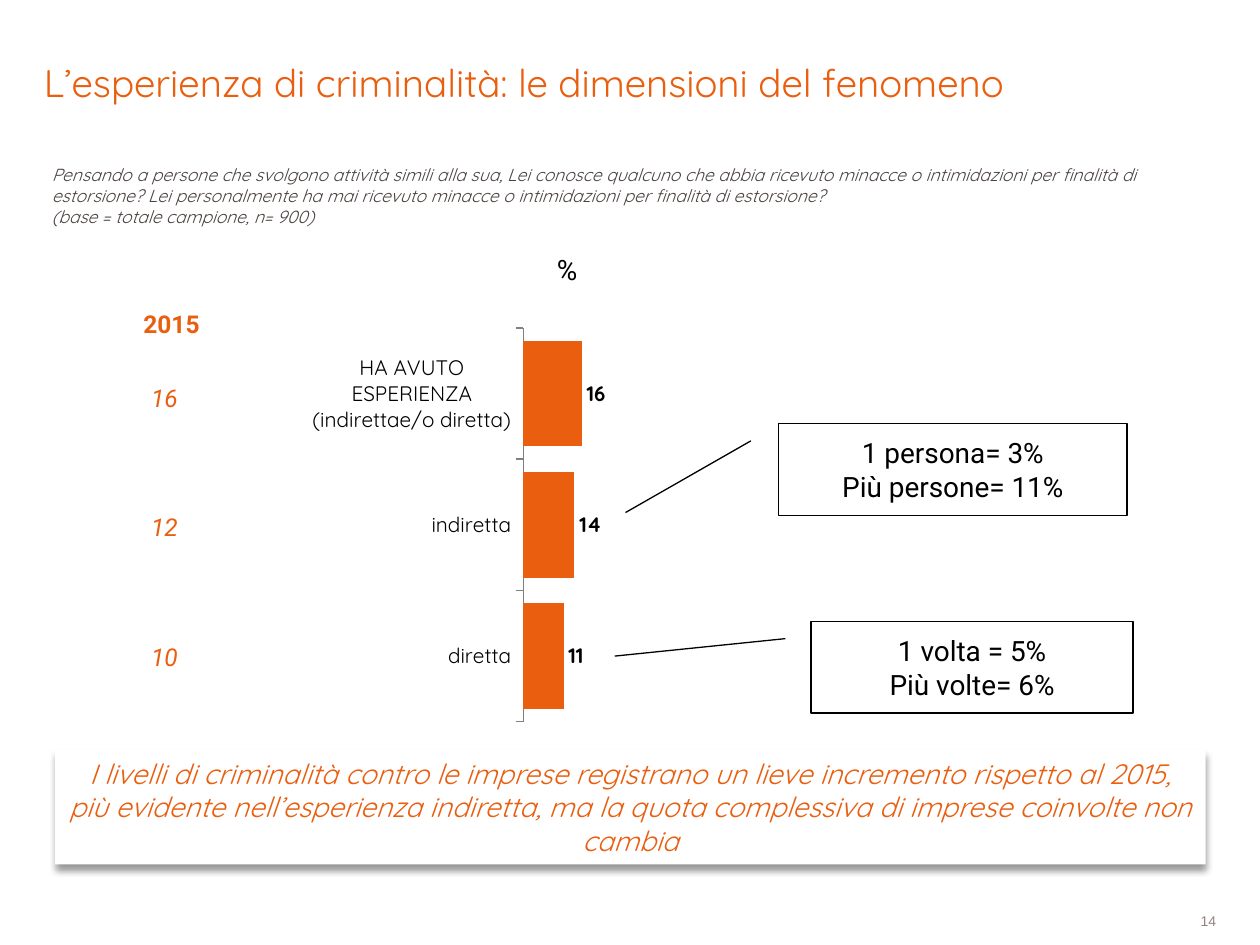
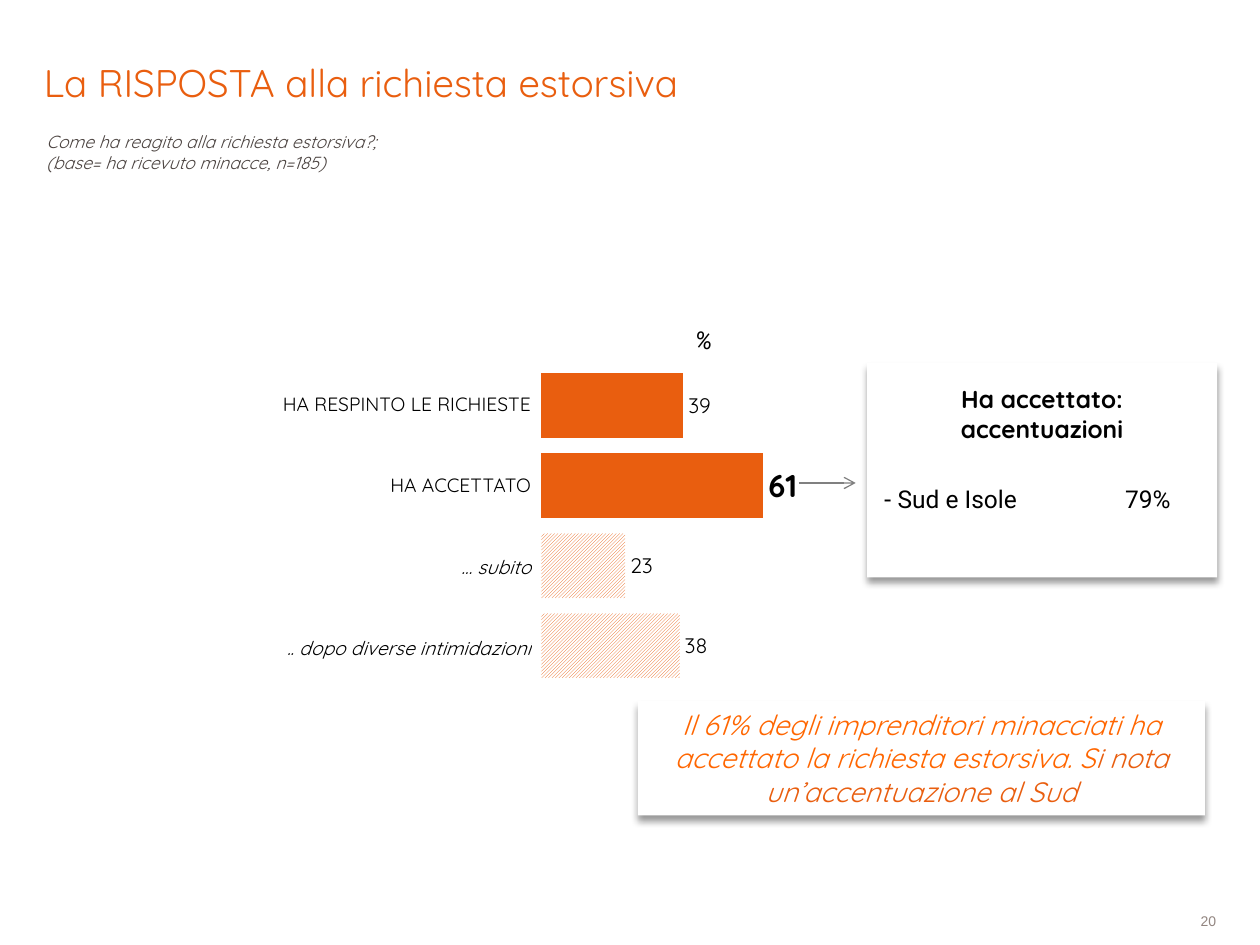
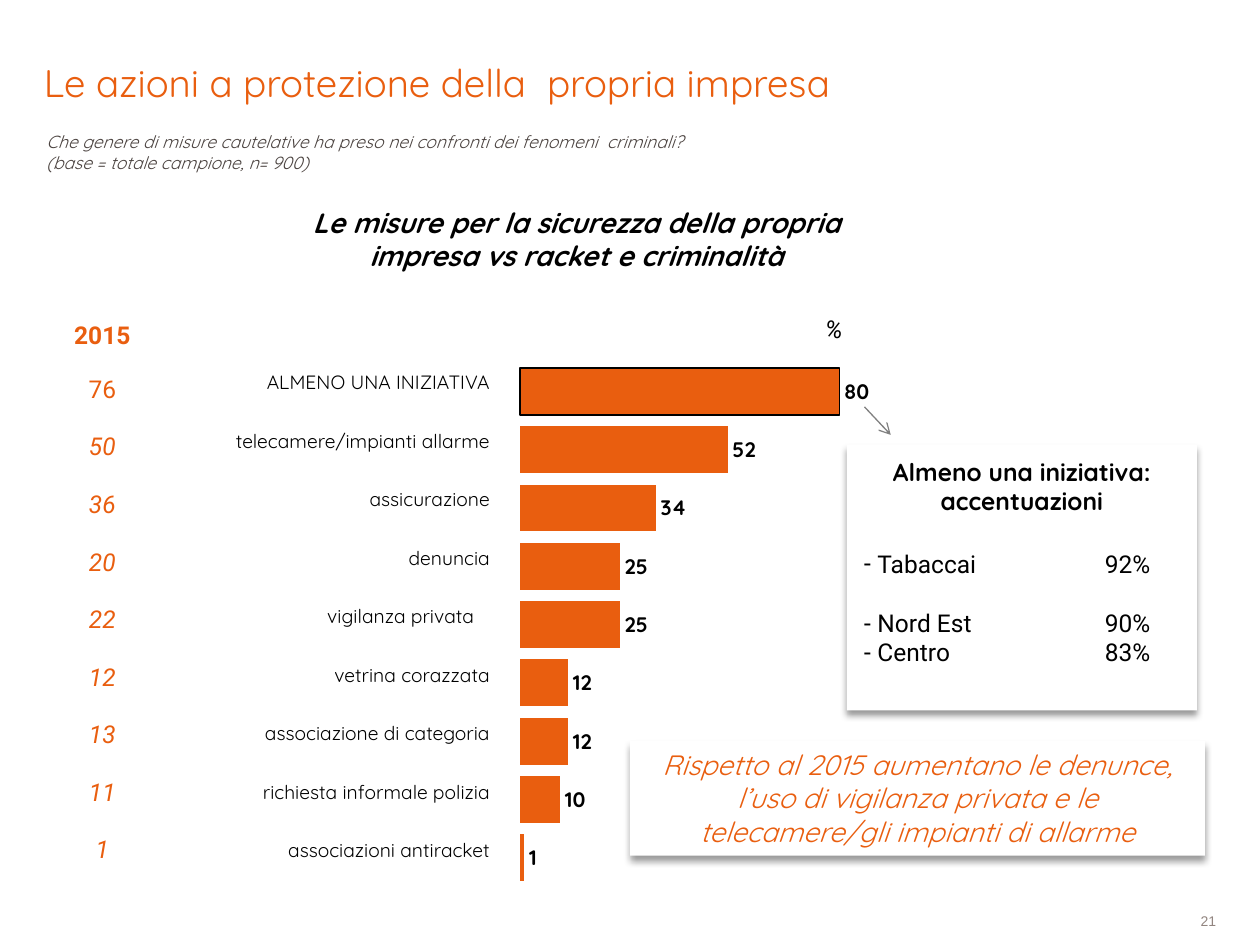
import pptx
import pptx.chart.data
import pptx.dml.color
import pptx.enum.chart
import pptx.enum.dml
import pptx.enum.shapes
import pptx.enum.text
import pptx.oxml
import pptx.oxml.ns
import pptx.util
from lxml import etree

Pt = pptx.util.Pt
qn = pptx.oxml.ns.qn
ALIGN = pptx.enum.text.PP_ALIGN
ANCHOR = pptx.enum.text.MSO_ANCHOR
SHAPE = pptx.enum.shapes.MSO_SHAPE

COLORS = {
    "orange": "E95E0F", "bright": "FF6600", "black": "000000", "white": "FFFFFF",
    "question": "4A423F", "number": "928580", "grey": "808080",
}

# Text formats
TITLE = {"name": "Quicksand", "size": 22, "color": "orange"}
QUESTION = {"name": "Quicksand", "size": 10, "color": "question", "italic": True}
NUMBER = {"name": "Arial", "size": 8, "color": "number"}
CONCLUSION = {"name": "Quicksand", "size": 16, "color": "orange", "italic": True}
HEADING = {"name": "Quicksand", "size": 14, "color": "black", "bold": True}
SUBTITLE = {**HEADING, "size": 16, "italic": True}
PLAIN = {"name": "Roboto", "size": 14, "color": "black"}
PERCENT = {**PLAIN, "italic": True}
CALLOUT = {**PLAIN, "size": 16}
YEAR = {"name": "Roboto", "size": 14, "color": "orange", "bold": True}
PAST = {"name": "Roboto", "size": 14, "color": "orange", "italic": True}
ROW = {"name": "Quicksand", "size": 11, "color": "black"}
CHART = {"name": "Roboto", "size": 18, "color": "black"}
LABEL = {"name": "Quicksand", "size": 12, "color": "black"}


def rgb(name):
    return pptx.dml.color.RGBColor.from_string(COLORS[name])


def style(font, fmt):
    for key, value in fmt.items():
        if key == "color":
            font.color.rgb = rgb(value)
        else:
            setattr(font, key, Pt(value) if key == "size" else value)


def place(sp, box):
    for key, value in zip(("left", "top", "width", "height"), box):
        setattr(sp, key, Pt(value))


def frame(tf, anchor=ANCHOR.TOP, inset=None):
    tf.auto_size = pptx.enum.text.MSO_AUTO_SIZE.NONE
    tf.word_wrap = True
    tf.vertical_anchor = anchor
    if inset is not None:
        for side in ("left", "top", "right", "bottom"):
            setattr(tf, "margin_" + side, Pt(inset))


def write(tf, paragraphs, fmt, align=ALIGN.LEFT):
    """Each paragraph is a string or a list of (text, format changes)."""
    for i, content in enumerate(paragraphs):
        p = tf.add_paragraph() if i else tf.paragraphs[0]
        p.alignment = align
        for text, changes in [(content, {})] if isinstance(content, str) else content:
            r = p.add_run()
            r.text = text
            style(r.font, {**fmt, **changes})


def text_box(s, box, paragraphs, fmt, align=ALIGN.LEFT, anchor=ANCHOR.TOP, inset=None):
    sp = s.shapes.add_textbox(*map(Pt, box))
    frame(sp.text_frame, anchor, inset)
    write(sp.text_frame, paragraphs, fmt, align)


def centred(s, x, y, text, fmt):
    """One short label around the point x, y."""
    text_box(s, (x - 30, y - 12, 60, 24), [text], fmt, ALIGN.CENTER, ANCHOR.MIDDLE, 0)


def new_slide(prs, layout, number, title, question, box):
    s = prs.slides.add_slide(prs.slide_layouts[layout])
    place(s.shapes.title, (25, 9.4, 601, 51))
    frame(s.shapes.title.text_frame, ANCHOR.BOTTOM, 0)
    write(s.shapes.title.text_frame, [title], TITLE)
    text_box(s, box, question, QUESTION)
    text_box(s, (598, 522, 97, 9), [str(number)], NUMBER, ALIGN.RIGHT, ANCHOR.MIDDLE, 0)
    return s


def white_shape(s, kind, box):
    sp = s.shapes.add_shape(kind, *map(Pt, box))
    sp.shadow.inherit = False
    sp.fill.solid()
    sp.fill.fore_color.rgb = rgb("white")
    sp.line.fill.background()
    return sp


def shadow_panel(s, box):
    sp = white_shape(s, SHAPE.RECTANGLE, box)
    effects = sp.element.spPr.find(qn("a:effectLst"))
    shadow = etree.SubElement(effects, qn("a:outerShdw"), blurRad=str(Pt(4)),
                              dist=str(Pt(3)), dir="5400000", algn="t", rotWithShape="0")
    color = etree.SubElement(shadow, qn("a:srgbClr"), val=COLORS["black"])
    etree.SubElement(color, qn("a:alpha"), val="40000")
    return sp


def conclusion(s, box, content):
    sp = shadow_panel(s, box)
    frame(sp.text_frame)
    write(sp.text_frame, [content], CONCLUSION, ALIGN.CENTER)


def callout(s, box, lines, adjustments):
    sp = white_shape(s, SHAPE.LINE_CALLOUT_1, box)
    sp.line.color.rgb = rgb("black")
    sp.line.width = Pt(0.75)
    for i, value in enumerate(adjustments):
        sp.adjustments[i] = value
    frame(sp.text_frame, ANCHOR.MIDDLE)
    write(sp.text_frame, lines, CALLOUT, ALIGN.CENTER)


def arrow(s, x1, y1, x2, y2):
    line = s.shapes.add_connector(pptx.enum.shapes.MSO_CONNECTOR.STRAIGHT,
                                  Pt(x1), Pt(y1), Pt(x2), Pt(y2))
    line.line.color.rgb = rgb("grey")
    line.line.width = Pt(0.75)
    etree.SubElement(line.line._get_or_add_ln(), qn("a:tailEnd"), type="arrow")
    etree.SubElement(line._element.spPr, qn("a:effectLst"))


def accents_card(s, box, heading, items, heading_y, list_y):
    """Card with a heading and a list of (name, share, space before)."""
    x, y, w, h = box
    shadow_panel(s, box)
    text_box(s, (x + 10, y + heading_y, w - 20, 45), [heading], HEADING,
             ALIGN.CENTER, ANCHOR.MIDDLE)
    body = s.placeholders[1]
    place(body, (x + 9.4, y + list_y, w - 19, h - list_y - 4))
    s.shapes.element.append(body.element)  # bring in front of the card
    frame(body.text_frame, inset=0)
    write(body.text_frame, [f"{name}\t{share}" for name, share, _ in items], PLAIN)
    for p, (_, _, gap) in zip(body.text_frame.paragraphs, items):
        pPr = p._p.get_or_add_pPr()
        pPr.set("marL", str(Pt(8)))
        pPr.set("indent", str(-Pt(8)))
        etree.SubElement(pPr, qn("a:buChar"), char="-")
        tabs = etree.SubElement(pPr, qn("a:tabLst"))
        etree.SubElement(tabs, qn("a:tab"), pos=str(Pt(138)), algn="l")
        p.space_before = Pt(gap)


def past_values(s, x, year_y, first_y, step, values, year_dx=0):
    """Column with the results of 2015."""
    centred(s, x + year_dx, year_y, "2015", YEAR)
    for i, (value, changes) in enumerate(values):
        centred(s, x, first_y + i * step, value, {**PAST, **changes})


def row_labels(s, box, rows):
    """Table of bar labels; each row is (text, format changes, right margin)."""
    table = s.shapes.add_table(len(rows), 1, *map(Pt, box)).table
    table.first_row = table.horz_banding = False
    for i, (text, changes, right) in enumerate(rows):
        table.rows[i].height = Pt(box[3] / len(rows))
        cell = table.cell(i, 0)
        cell.fill.background()
        cell.vertical_anchor = ANCHOR.MIDDLE
        for side, value in (("left", 1), ("top", 1), ("right", right), ("bottom", 0)):
            setattr(cell, "margin_" + side, Pt(value))
        write(cell.text_frame, [text], {**ROW, **changes}, ALIGN.RIGHT)


def bar_chart(s, box, cats, vals, plot_box, bold=True, show_cats=False):
    data = pptx.chart.data.CategoryChartData(number_format="0")
    data.categories = cats
    data.add_series("Series 1", vals)
    chart = s.shapes.add_chart(pptx.enum.chart.XL_CHART_TYPE.BAR_CLUSTERED,
                               *map(Pt, box), data).chart
    chart.has_legend = chart.has_title = False
    style(chart.font, CHART)

    # Axes
    axis = chart.value_axis
    for key, value in {"minimum_scale": 0, "maximum_scale": 100, "major_unit": 10,
                       "has_major_gridlines": False, "visible": False}.items():
        setattr(axis, key, value)
    axis = chart.category_axis
    axis.reverse_order = True
    axis.visible = show_cats
    if show_cats:
        axis.format.line.color.rgb = rgb("grey")
        style(axis.tick_labels.font, LABEL)

    # Bars and their labels
    plot = chart.plots[0]
    plot.gap_width = 24
    plot.vary_by_categories = False
    series = plot.series[0]
    series.invert_if_negative = False
    series.format.fill.solid()
    series.format.fill.fore_color.rgb = rgb("orange")
    labels = series.data_labels
    for key, value in {"show_value": True, "number_format": "0",
                       "number_format_is_linked": False,
                       "position": pptx.enum.chart.XL_LABEL_POSITION.OUTSIDE_END}.items():
        setattr(labels, key, value)
    style(labels.font, {**LABEL, "bold": bold})

    # Inner plot area as fractions of the chart
    area = next(chart.element.iter(qn("c:plotArea")))
    for old in area.findall(qn("c:layout")):
        area.remove(old)
    layout = etree.Element(qn("c:layout"))
    area.insert(0, layout)
    manual = etree.SubElement(layout, qn("c:manualLayout"))
    settings = [("layoutTarget", "inner"), ("xMode", "edge"), ("yMode", "edge"),
                *zip("xywh", plot_box)]
    for tag, value in settings:
        etree.SubElement(manual, qn("c:" + tag), val=str(value))
    return series


def experience_slide(prs):
    s = new_slide(prs, 5, 14, "L’esperienza di criminalità: le dimensioni del fenomeno", [
        "Pensando a persone che svolgono attività simili alla sua, Lei conosce qualcuno "
        "che abbia ricevuto minacce o intimidazioni per finalità di estorsione? Lei "
        "personalmente ha mai ricevuto minacce o intimidazioni per finalità di estorsione?",
        "(base = totale campione, n= 900)"], (22.5, 90, 685, 55))
    centred(s, 324, 154, "%", CALLOUT)
    bar_chart(s, (178.5, 187, 420.5, 313),
              ["HA AVUTO ESPERIENZA (indirettae/o diretta)", "indiretta", "diretta"],
              [16, 14, 11], (0.28, 0, 0.5, 0.72), show_cats=True)
    past_values(s, 94, 185, 227, 74, [(v, {}) for v in ("16", "12", "10")], 4)
    callout(s, (445, 242, 199, 52.5), ["1 persona= 3%", "Più persone= 11%"],
            (0.19, -0.08, 0.97, -0.44))
    callout(s, (463.5, 355, 184, 52.5), ["1 volta = 5%", "Più volte= 6%"],
            (0.19, -0.08, 0.38, -0.61))
    conclusion(s, (31.5, 428.5, 657.5, 65.5),
               "I livelli di criminalità contro le imprese registrano un lieve incremento "
               "rispetto al 2015, più evidente nell’esperienza indiretta, ma la quota "
               "complessiva di imprese coinvolte non cambia")


def response_slide(prs):
    s = new_slide(prs, 1, 20, "La RISPOSTA alla richiesta estorsiva", [
        "Come ha reagito alla richiesta estorsiva?;",
        "(base= ha ricevuto minacce, n=185)"], (19.5, 71.3, 488, 32))
    series = bar_chart(s, (222, 206, 416, 301.5), [str(n) for n in range(1, 7)],
                       [39, 61, 23, 38, None, None], (0.21, 0.01, 0.5, 0.91), bold=False)
    # Hatched bars split the accepted share
    for i in (2, 3):
        fill = series.points[i].format.fill
        fill.patterned()
        fill.pattern = pptx.enum.dml.MSO_PATTERN.DARK_UPWARD_DIAGONAL
        fill.fore_color.rgb = rgb("orange")
        fill.back_color.rgb = rgb("white")
    label = series.points[1].data_label
    style(label.font, {**LABEL, "size": 18, "bold": True})
    label.position = pptx.enum.chart.XL_LABEL_POSITION.OUTSIDE_END
    row_labels(s, (111.5, 207.5, 193, 185.5), [
        ("HA RESPINTO LE RICHIESTE", {}, 1), ("HA ACCETTATO", {}, 1),
        ("… subito", {"italic": True}, 1),
        (".. dopo diverse intimidazioni", {"italic": True}, 1)])
    centred(s, 402, 194, "%", PERCENT)
    conclusion(s, (364.5, 400.5, 324, 65.5), [
        ("Il 61% degli imprenditori minacciati ha accettato la richiesta estorsiva. S",
         {"color": "bright"}),
        ("i nota un’accentuazione al Sud", {})])
    accents_card(s, (495.5, 207.5, 200, 122.5), "Ha accettato: accentuazioni",
                 [("Sud e Isole", "79%", 0)], 6.5, 69)
    arrow(s, 456.5, 276, 489, 276)


def protection_slide(prs):
    s = new_slide(prs, 1, 21, "Le azioni a protezione della  propria impresa", [
        "Che genere di misure cautelative ha preso nei confronti dei fenomeni  criminali?",
        "(base = totale campione, n= 900)"], (19.5, 71.3, 690, 32))
    series = bar_chart(s, (206, 204, 456, 309), [str(n) for n in range(1, 10)],
                       [80, 52, 34, 25, 25, 12, 12, 10, 1], (0.2, 0.01, 0.5, 0.97))
    total = series.points[0].format
    total.fill.solid()
    total.fill.fore_color.rgb = rgb("orange")
    total.line.color.rgb = rgb("black")
    total.line.width = Pt(0.75)
    row_labels(s, (88, 201.5, 193, 301), [
        ("ALMENO UNA INIZIATIVA", {}, 1), ("telecamere/impianti allarme", {}, 1),
        ("assicurazione", {}, 1), ("denuncia", {}, 1), ("vigilanza privata", {}, 10),
        ("vetrina corazzata", {}, 1), ("associazione di categoria", {}, 1),
        ("richiesta informale polizia", {}, 1), ("associazioni antiracket", {}, 1)])
    text_box(s, (167, 116.5, 325, 40),
             ["Le misure per la sicurezza della propria impresa vs racket e criminalità"],
             SUBTITLE, ALIGN.CENTER, ANCHOR.MIDDLE)
    centred(s, 476.5, 188, "%", PERCENT)
    past_values(s, 58.5, 191, 222, 32.9, [("76", {"italic": False})] + [
        (v, {}) for v in ("50", "36", "20", "22", "12", "13", "11", "1")])
    arrow(s, 494, 232.5, 509, 248.5)
    accents_card(s, (484, 254, 200, 152), "Almeno una iniziativa: accentuazioni",
                 [("Tabaccai", "92%", 0), ("Nord Est", "90%", 17), ("Centro", "83%", 0)],
                 1.5, 59.5)
    conclusion(s, (360, 423.5, 328.5, 65.5),
               "Rispetto al 2015 aumentano le denunce, l’uso di vigilanza privata e le "
               "telecamere/gli impianti di allarme")


def main():
    prs = pptx.Presentation()
    prs.slide_width, prs.slide_height = Pt(720), Pt(540)
    experience_slide(prs)
    response_slide(prs)
    protection_slide(prs)
    prs.save("out.pptx")


if __name__ == "__main__":
    main()
